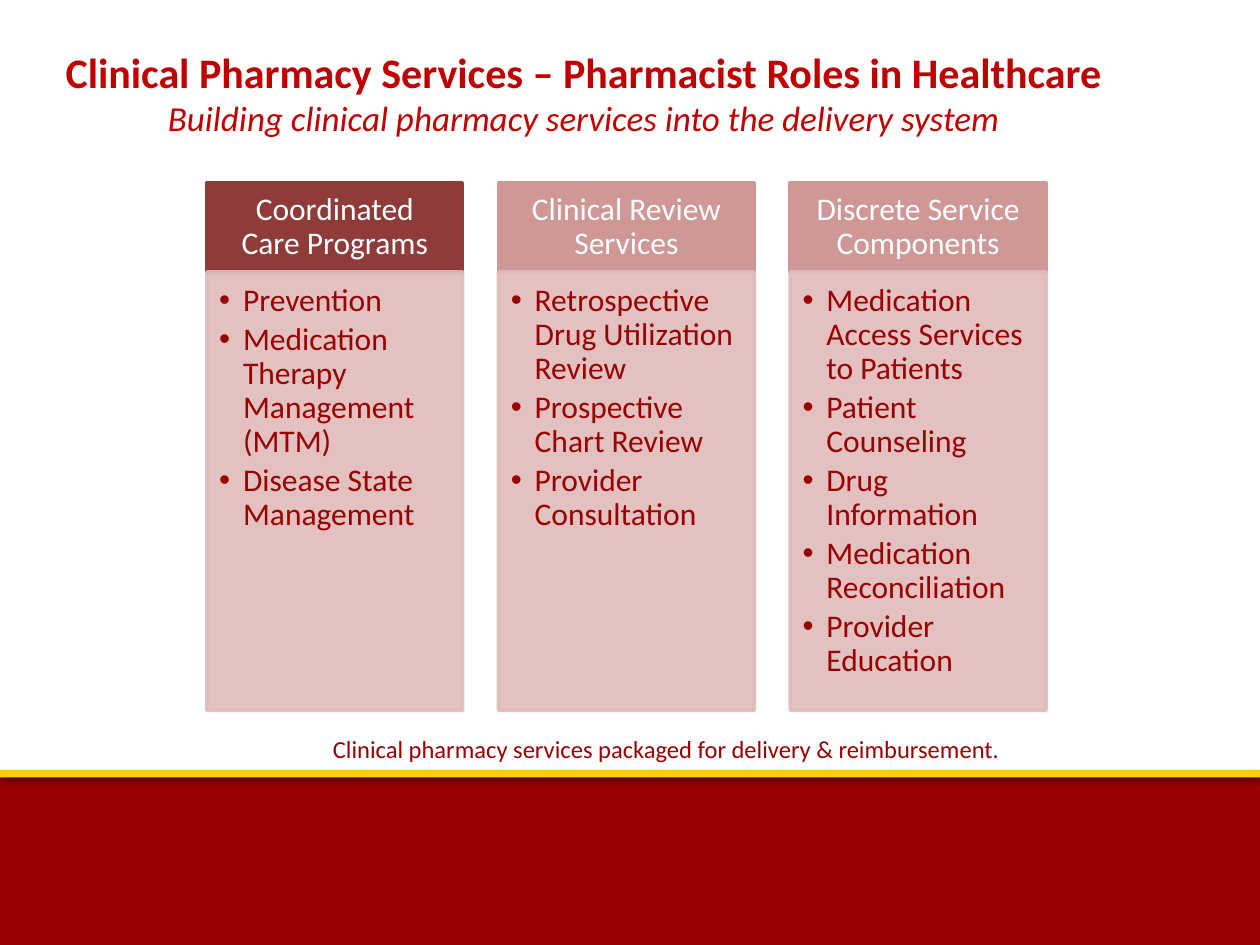
from lxml.etree import SubElement
from pptx import Presentation
from pptx.dml.color import RGBColor
from pptx.enum.shapes import MSO_SHAPE
from pptx.enum.text import MSO_ANCHOR, PP_ALIGN
from pptx.oxml.ns import qn
from pptx.util import Cm, Pt

COLORS = {
    "band": "990000", "stripe": "FFCC00", "active": "8E3B39",
    "muted": "CF9796", "panel": "DFBBBA", "title": "C00000",
    "text": "990000", "white": "FFFFFF", "shadow": "000000",
}


class SlideBuilder:
    font = "Calibri"
    body_size = 18

    def __init__(self, slide):
        self.slide = slide

    def color(self, name):
        return RGBColor.from_string(COLORS[name])

    def set_opacity(self, fill_parent, percent):
        for color in fill_parent.iter(qn("a:srgbClr")):
            SubElement(color, qn("a:alpha"), val=str(percent * 1000))

    def rectangle(self, left, top, width, height, fill, outlined=False):
        box = self.slide.shapes.add_shape(
            MSO_SHAPE.RECTANGLE, Cm(left), Cm(top), Cm(width), Cm(height))
        box.shadow.inherit = False
        box.fill.solid()
        box.fill.fore_color.rgb = self.color(fill)
        if outlined:
            box.line.color.rgb = self.color(fill)
            box.line.width = Pt(2)
        else:
            box.line.fill.background()
        return box

    def band(self, top, height, fill, opacity, distance):
        box = self.rectangle(0, top, 25.4, height, fill)
        effects = box.element.spPr.find(qn("a:effectLst"))
        shadow = SubElement(
            effects, qn("a:outerShdw"), blurRad=str(Pt(3.1)),
            dist=str(Pt(distance)), dir="5400000", rotWithShape="0")
        SubElement(shadow, qn("a:srgbClr"), val=COLORS["shadow"])
        self.set_opacity(shadow, opacity)

    def frame(self, box, insets, anchor):
        frame = box.text_frame
        frame.word_wrap = True
        frame.vertical_anchor = anchor
        (frame.margin_left, frame.margin_top,
         frame.margin_right, frame.margin_bottom) = map(Cm, insets)
        return frame

    def run(self, paragraph, text, size, color, bold=False, italic=False):
        run = paragraph.add_run()
        run.text = text
        run.font.name = self.font
        run.font.size = Pt(size)
        run.font.bold = bold
        run.font.italic = italic
        run.font.color.rgb = self.color(color)

    def heading(self, left, top, width, height, text, fill):
        box = self.rectangle(left, top, width, height, fill, outlined=True)
        frame = self.frame(box, (0.36, 0.2, 0.36, 0.2), MSO_ANCHOR.MIDDLE)
        paragraph = frame.paragraphs[0]
        paragraph.alignment = PP_ALIGN.CENTER
        paragraph.line_spacing = 0.9
        self.run(paragraph, text, self.body_size, "white")

    def bullet_panel(self, left, top, width, height, items):
        box = self.rectangle(left, top, width, height, "panel", outlined=True)
        self.set_opacity(box.element.spPr, 90)
        frame = self.frame(box, (0.25, 0.25, 0.36, 0.41), MSO_ANCHOR.TOP)
        for index, item in enumerate(items):
            paragraph = frame.add_paragraph() if index else frame.paragraphs[0]
            paragraph.alignment = PP_ALIGN.LEFT
            paragraph.level = 1
            paragraph.line_spacing = 0.9
            paragraph.space_after = Pt(2.8)
            properties = paragraph._p.get_or_add_pPr()
            properties.set("marL", str(Cm(0.48)))
            properties.set("indent", str(-Cm(0.48)))
            SubElement(properties, qn("a:buFont"), typeface="Arial")
            SubElement(properties, qn("a:buChar"), char="•")
            self.run(paragraph, item, self.body_size, "text")

    def centred_text(self, left, top, width, height, lines):
        box = self.slide.shapes.add_textbox(
            Cm(left), Cm(top), Cm(width), Cm(height))
        frame = box.text_frame
        frame.word_wrap = True
        for index, line in enumerate(lines):
            paragraph = frame.add_paragraph() if index else frame.paragraphs[0]
            paragraph.alignment = PP_ALIGN.CENTER
            self.run(paragraph, **line)


SERVICES = [
    ("Coordinated Care Programs", "active",
     ["Prevention", "Medication Therapy Management (MTM)",
      "Disease State Management"]),
    ("Clinical Review Services", "muted",
     ["Retrospective Drug Utilization Review", "Prospective Chart Review",
      "Provider Consultation"]),
    ("Discrete Service Components", "muted",
     ["Medication Access Services to Patients", "Patient Counseling",
      "Drug Information", "Medication Reconciliation",
      "Provider Education"]),
]


def main():
    presentation = Presentation()
    presentation.slide_width = Cm(25.4)
    presentation.slide_height = Cm(19.05)
    builder = SlideBuilder(
        presentation.slides.add_slide(presentation.slide_layouts[6]))

    builder.band(15.67, 3.38, "band", 35, 1.8)
    builder.band(15.52, 0.15, "stripe", 38, 1.6)

    first_left, column_width, column_pitch = 4.17, 5.16, 5.88
    heading_top, heading_height, panel_height = 3.68, 1.8, 8.84
    for column, (service, fill, items) in enumerate(SERVICES):
        left = first_left + column * column_pitch
        builder.heading(
            left, heading_top, column_width, heading_height, service, fill)
        builder.bullet_panel(
            left, heading_top + heading_height, column_width, panel_height,
            items)

    builder.centred_text(0.91, 0.81, 21.72, 2.13, [
        dict(text="Clinical Pharmacy Services – Pharmacist Roles in Healthcare",
             size=24, color="title", bold=True),
        dict(text="Building clinical pharmacy services into the delivery system",
             size=20, color="title", italic=True),
    ])
    builder.centred_text(3.58, 14.68, 19.71, 0.86, [
        dict(text="Clinical pharmacy services packaged for delivery & reimbursement.",
             size=14, color="text"),
    ])
    presentation.save("out.pptx")


if __name__ == "__main__":
    main()
